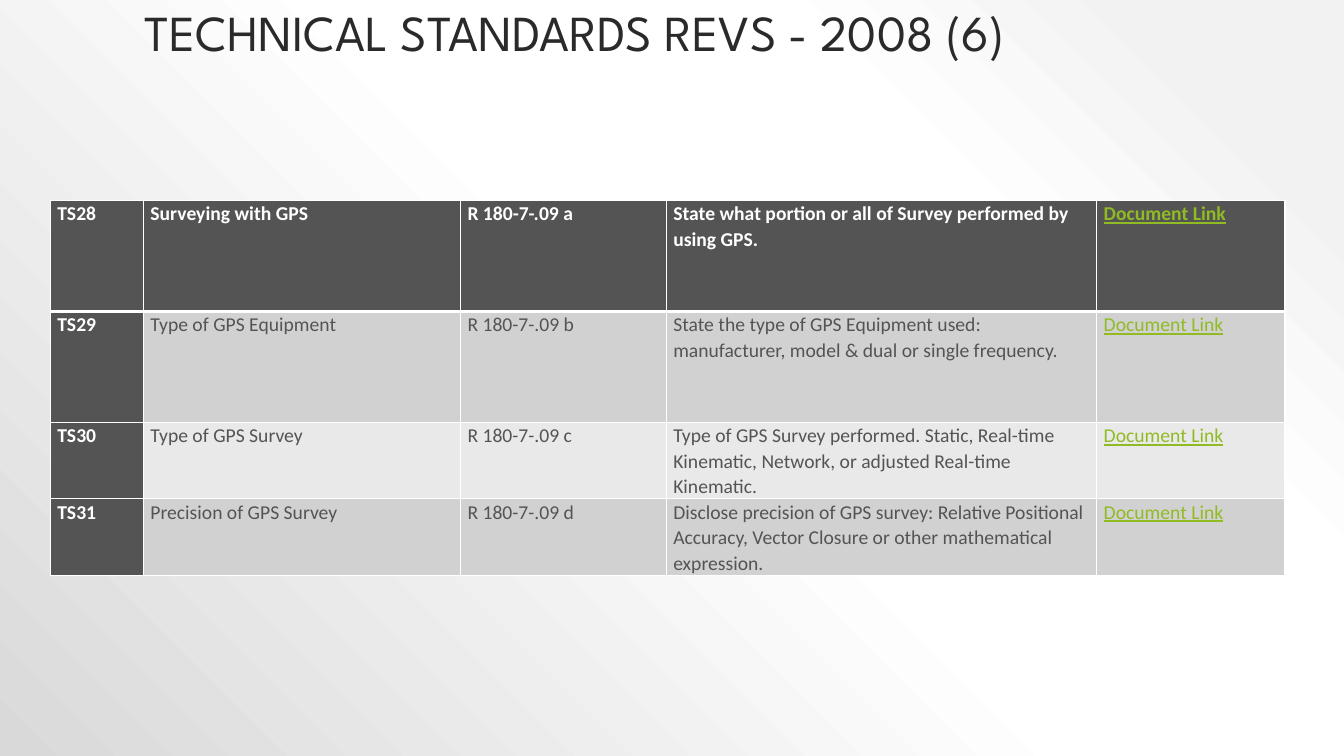
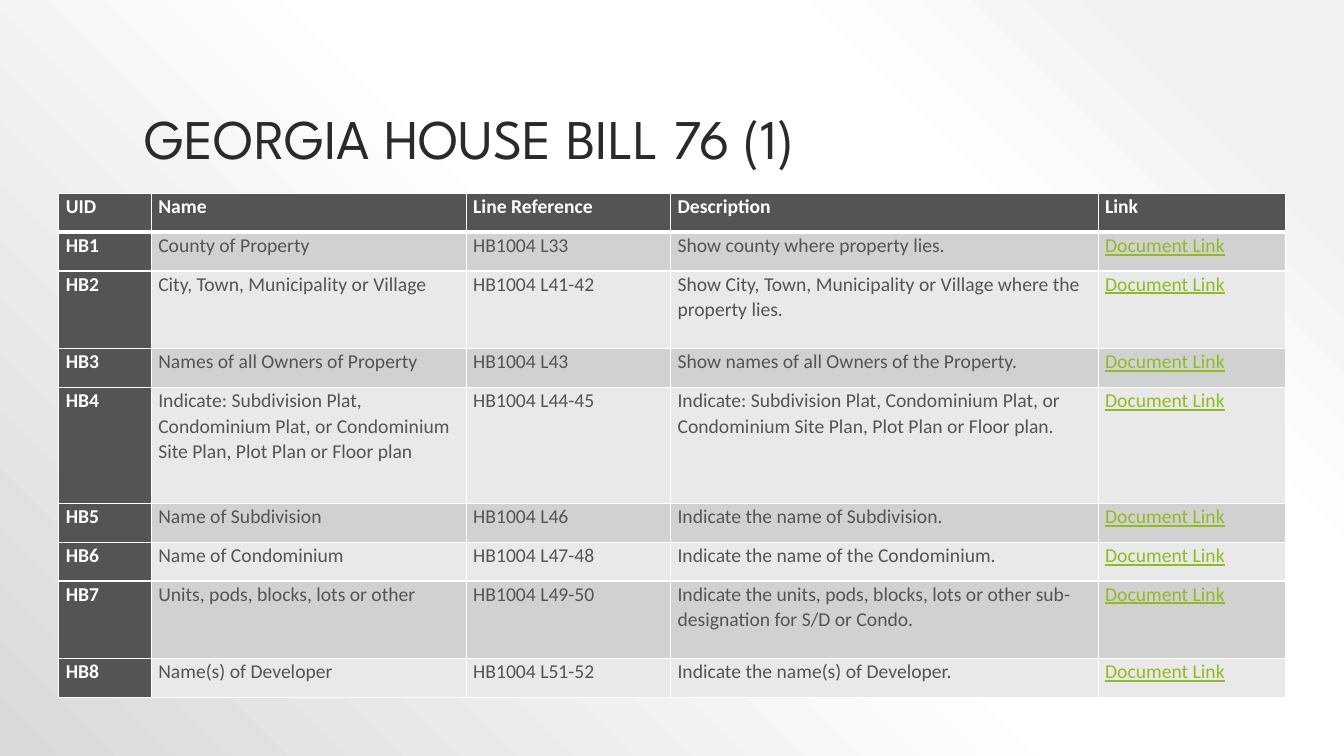
from dataclasses import dataclass

from lxml import etree
from pptx import Presentation
from pptx.dml.color import RGBColor
from pptx.enum.text import MSO_ANCHOR
from pptx.oxml import parse_xml
from pptx.oxml.ns import qn
from pptx.util import Pt

BOTTOM = MSO_ANCHOR.BOTTOM
TOP = MSO_ANCHOR.TOP
DRAW_NS = "http://schemas.openxmlformats.org/drawingml/2006/main"


# Colours, fonts and sizes
@dataclass(frozen=True)
class Theme:
    ink: str = "2A2A2A"
    dark: str = "545454"
    white: str = "FFFFFF"
    link: str = "90BB23"
    bands: tuple[str, str] = ("D1D1D1", "E9E9E9")
    stops: tuple[tuple[int, str], ...] = (
        (10, "F2F2F2"), (28, "FFFFFF"), (48, "FFFFFF"), (100, "D9D9D9"))
    head_font: str = "League Spartan"
    body_font: str = "Calibri"
    body_size: float = 14
    thin: float = 1
    thick: float = 3
    inset: float = 5


THEME = Theme()
LINK = "Document Link"
COLS = (66.5, 226.5, 147, 307.5, 134.5)  # shares of the table width


@dataclass(frozen=True)
class Box:
    left: float
    top: float
    width: float
    height: float

    def lengths(self) -> tuple:
        return Pt(self.left), Pt(self.top), Pt(self.width), Pt(self.height)


@dataclass(frozen=True)
class Page:
    title: str
    size: float
    head: Box
    grid: Box
    shares: tuple[float, ...]  # shares of the table height
    rows: tuple[tuple[str, ...], ...]


PAGES = (
    Page(
        "TECHNICAL STANDARDS REVS - 2008 (6)", 36,
        Box(96, 0, 768, 48), Box(36, 143.3, 882, 267.6),
        (79.2, 79.2, 54.6, 54.6),
        (
            ("TS28", "Surveying with GPS", "R 180-7-.09 a",
             "State what portion or all of Survey performed by using GPS.", LINK),
            ("TS29", "Type of GPS Equipment", "R 180-7-.09 b",
             "State the type of GPS Equipment used: manufacturer, model & dual "
             "or single frequency.", LINK),
            ("TS30", "Type of GPS Survey", "R 180-7-.09 c",
             "Type of GPS Survey performed. Static, Real-time Kinematic, "
             "Network, or adjusted Real-time Kinematic.", LINK),
            ("TS31", "Precision of GPS Survey", "R 180-7-.09 d",
             "Disclose precision of GPS survey: Relative Positional Accuracy, "
             "Vector Closure or other mathematical expression.", LINK),
        ),
    ),
    Page(
        "GEORGIA HOUSE BILL 76 (1)", 40,
        Box(96, 21.6, 768, 104.4), Box(42, 138.2, 876, 360),
        (1, 1, 2, 1, 3, 1, 1, 2, 1),
        (
            ("UID", "Name", "Line Reference", "Description", "Link"),
            ("HB1", "County of Property", "HB1004 L33",
             "Show county where property lies.", LINK),
            ("HB2", "City, Town, Municipality or Village", "HB1004 L41-42",
             "Show City, Town, Municipality or Village where the property lies.",
             LINK),
            ("HB3", "Names of all Owners of Property", "HB1004 L43",
             "Show names of all Owners of the Property.", LINK),
            ("HB4", "Indicate: Subdivision Plat, Condominium Plat, or "
             "Condominium Site Plan, Plot Plan or Floor plan", "HB1004 L44-45",
             "Indicate: Subdivision Plat, Condominium Plat, or Condominium Site "
             "Plan, Plot Plan or Floor plan.", LINK),
            ("HB5", "Name of Subdivision", "HB1004 L46",
             "Indicate the name of Subdivision.", LINK),
            ("HB6", "Name of Condominium", "HB1004 L47-48",
             "Indicate the name of the Condominium.", LINK),
            ("HB7", "Units, pods, blocks, lots or other", "HB1004 L49-50",
             "Indicate the units, pods, blocks, lots or other sub-designation "
             "for S/D or Condo.", LINK),
            ("HB8", "Name(s) of Developer", "HB1004 L51-52",
             "Indicate the name(s) of Developer.", LINK),
        ),
    ),
)


# Text
def write(frame, text: str, *, font: str = THEME.body_font,
          size: float = THEME.body_size, color: str = THEME.dark,
          bold: bool = False, under: bool = False,
          space: float = 1.07) -> None:
    frame.word_wrap = True
    para = frame.paragraphs[0]
    para.line_spacing = space
    run = para.add_run()
    run.text = text
    face = run.font
    face.name, face.size, face.bold = font, Pt(size), bold
    face.color.rgb = RGBColor.from_string(color)
    if under:
        face.underline = True


# Background shared by all slides
def paint(master) -> None:
    master.background.fill.gradient()
    old = master.element.find(".//" + qn("a:gradFill"))
    stops = "".join(
        f'<a:gs pos="{pos * 1000}"><a:srgbClr val="{color}"/></a:gs>'
        for pos, color in THEME.stops)
    new = parse_xml(
        f'<a:gradFill xmlns:a="{DRAW_NS}" rotWithShape="1">'
        f'<a:gsLst>{stops}</a:gsLst><a:path path="circle">'
        '<a:fillToRect l="100000" b="100000"/></a:path></a:gradFill>')
    old.getparent().replace(old, new)


# Table
def edge(cell, **widths: float) -> None:
    props = cell._tc.get_or_add_tcPr()
    for spot, side in enumerate("LRTB"):
        line = etree.Element(qn(f"a:ln{side}"))
        line.set("w", str(Pt(widths.get(side, THEME.thin))))
        fill = etree.SubElement(line, qn("a:solidFill"))
        etree.SubElement(fill, qn("a:srgbClr")).set("val", THEME.white)
        props.insert(spot, line)


def fill_cell(cell, text: str, row: int, col: int) -> None:
    strong = row == 0 or col == 0
    link = text == LINK
    shade = THEME.dark if strong else THEME.bands[(row - 1) % 2]
    cell.fill.solid()
    cell.fill.fore_color.rgb = RGBColor.from_string(shade)
    cell.margin_left = cell.margin_right = Pt(THEME.inset)
    cell.margin_top = cell.margin_bottom = Pt(0)
    cell.vertical_anchor = TOP
    color = THEME.link if link else THEME.white if strong else THEME.dark
    write(cell.text_frame, text, color=color, bold=strong, under=link)
    edge(cell, T=THEME.thick if row == 1 else THEME.thin,
         B=THEME.thick if row == 0 else THEME.thin)


def add_grid(slide, page: Page) -> None:
    box = page.grid
    table = slide.shapes.add_table(
        len(page.rows), len(COLS), *box.lengths()).table
    table.first_col = True
    for col, share in zip(table.columns, COLS):
        col.width = Pt(box.width * share / sum(COLS))
    for row, share in zip(table.rows, page.shares):
        row.height = Pt(box.height * share / sum(page.shares))
    for r, texts in enumerate(page.rows):
        for c, text in enumerate(texts):
            fill_cell(table.cell(r, c), text, r, c)


# Slides
def add_page(deck, page: Page) -> None:
    slide = deck.slides.add_slide(deck.slide_layouts[6])
    frame = slide.shapes.add_textbox(*page.head.lengths()).text_frame
    frame.vertical_anchor = BOTTOM
    write(frame, page.title, font=THEME.head_font, size=page.size,
          color=THEME.ink, space=0.9)
    add_grid(slide, page)


def main() -> None:
    deck = Presentation()
    deck.slide_width, deck.slide_height = Pt(960), Pt(540)
    paint(deck.slide_master)
    for page in PAGES:
        add_page(deck, page)
    deck.save("out.pptx")


if __name__ == "__main__":
    main()
